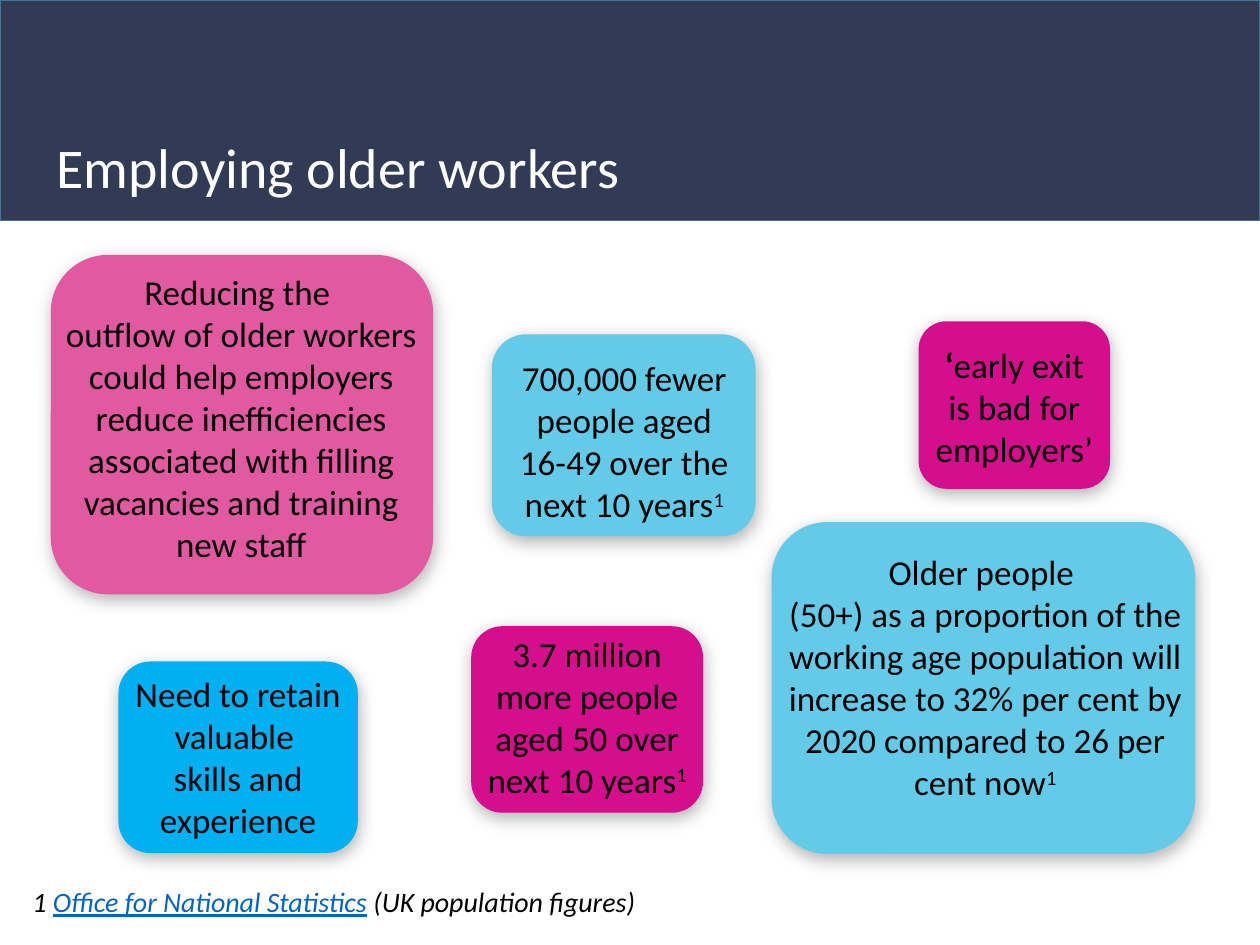
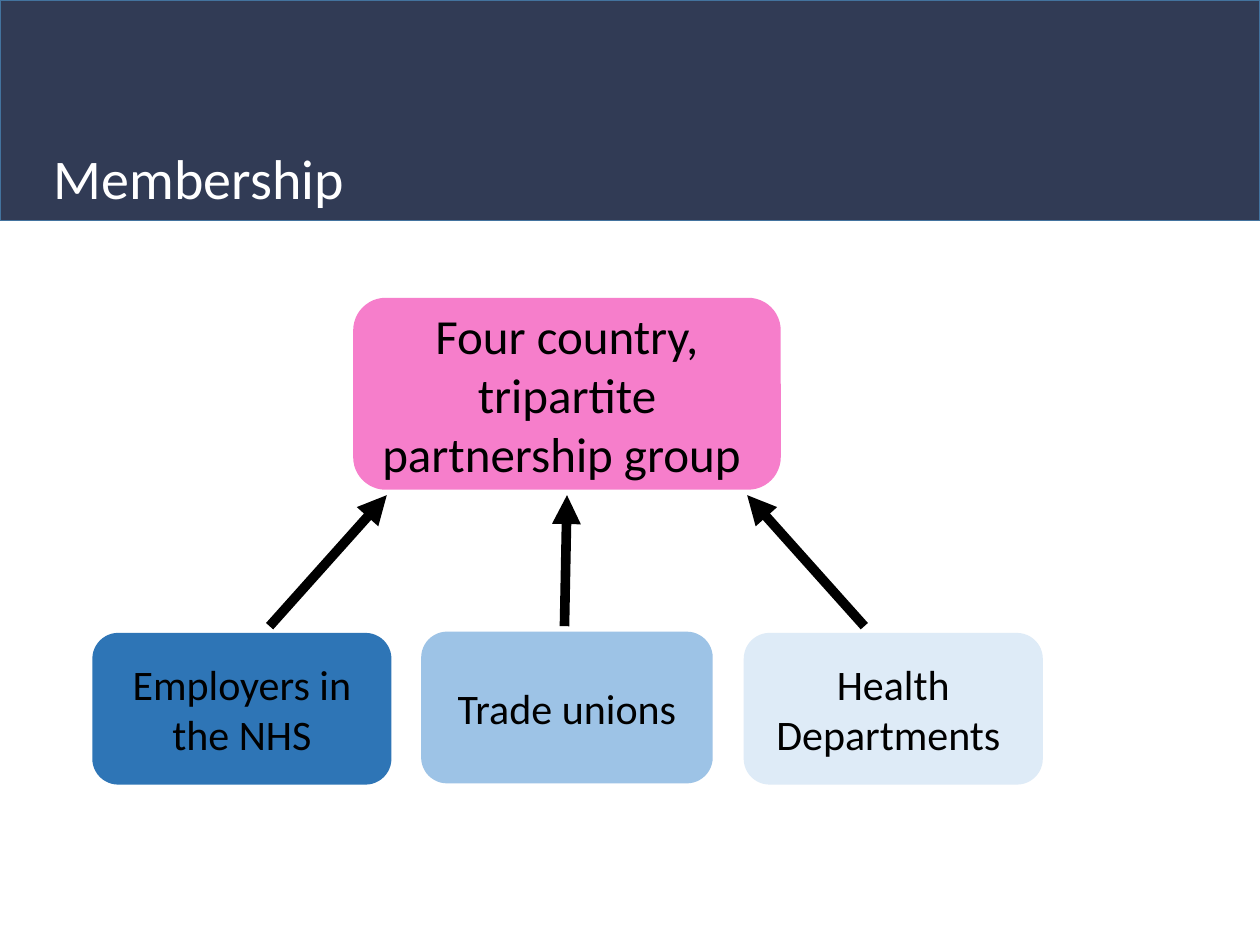
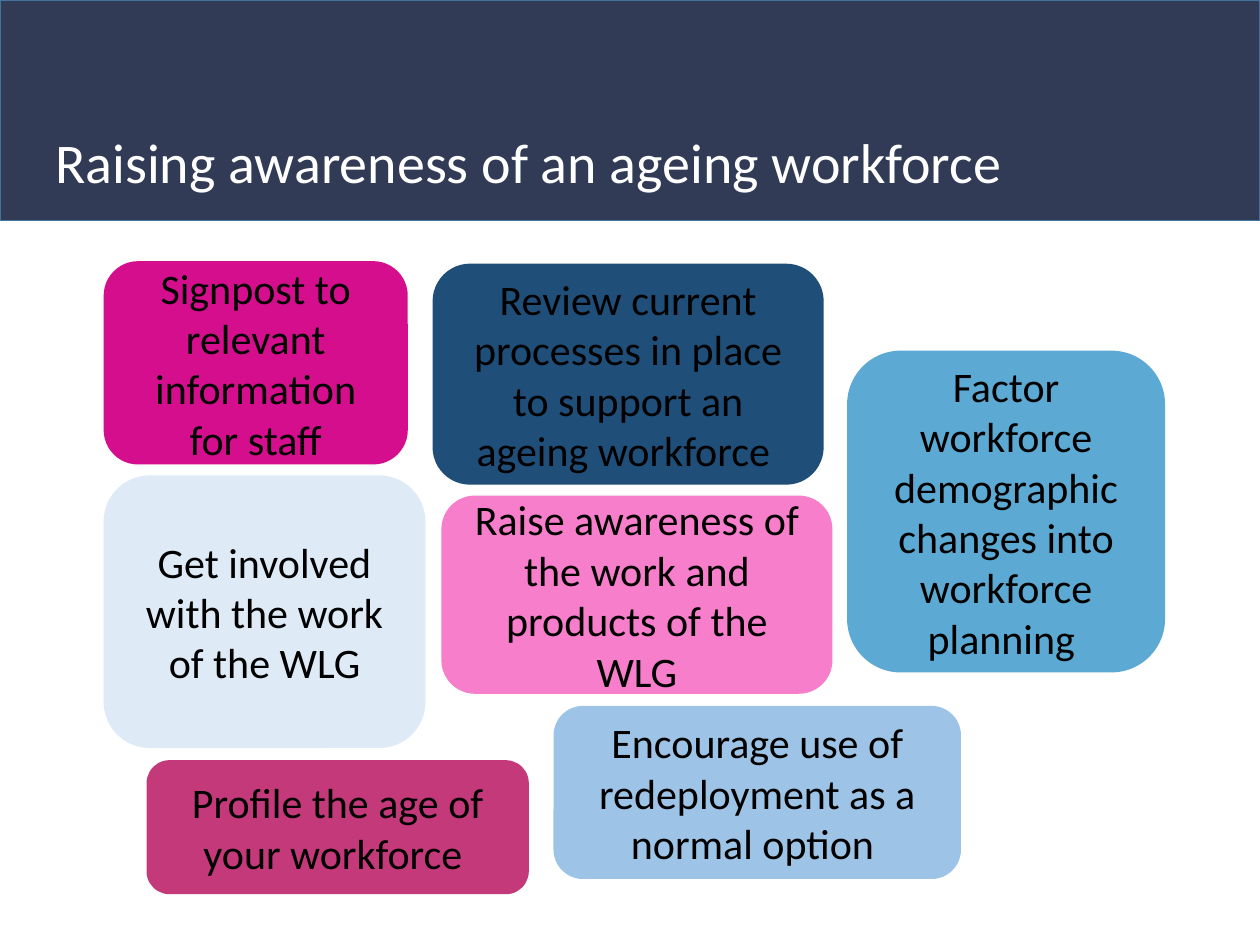
import pptx
import pptx.util
import pptx.dml.color
import pptx.enum.shapes
import pptx.enum.text
import lxml.etree
from dataclasses import dataclass
from pptx.util import Inches

SHAPE = pptx.enum.shapes.MSO_SHAPE
ANCHOR = pptx.enum.text.MSO_ANCHOR
ALIGN = pptx.enum.text.PP_ALIGN


@dataclass(frozen=True)
class Theme:
    font: str = "Calibri"
    navy: str = "313B55"
    rim: str = "43739E"
    white: str = "FFFFFF"
    black: str = "000000"
    link: str = "0563C1"
    pink: str = "F67ECB"
    rose: str = "E159A0"
    magenta: str = "D40E8C"
    berry: str = "C3397A"
    aqua: str = "63CBE8"
    bright: str = "00B0F0"
    pale: str = "DEEBF7"
    light: str = "9DC3E6"
    sky: str = "5CAAD3"
    blue: str = "2E75B6"
    deep: str = "1F4E79"
    title: int = 32
    lead: int = 28
    body: int = 24
    fact: int = 20
    note: int = 16
    arrow: float = 5.5


T = Theme()


def rgb(code):
    return pptx.dml.color.RGBColor.from_string(code)


def add_node(parent, tag, **attrs):
    name = pptx.oxml.ns.qn(tag)
    return lxml.etree.SubElement(parent, name, {k: str(v) for k, v in attrs.items()})


def write(frame, paras, size, color=T.black, align=ALIGN.CENTER, italic=None):
    frame.word_wrap = True
    for i, runs in enumerate(paras):
        para = frame.paragraphs[0] if i == 0 else frame.add_paragraph()
        para.alignment = align
        font = para.font
        font.name, font.size, font.italic = T.font, pptx.util.Pt(size), italic
        font.color.rgb = rgb(color)
        for part in [runs] if isinstance(runs, str) else runs:
            words, style = (part, "") if isinstance(part, str) else part
            run = para.add_run()
            run.text = words
            if style == "bold":
                run.font.bold = True
            elif style == "super":
                run.font._element.set("baseline", "30000")
            elif style == "link":
                run.font.underline = True
                run.font.color.rgb = rgb(T.link)


def add_text(slide, box, paras, size, **style):
    frame = slide.shapes.add_textbox(*map(Inches, box)).text_frame
    write(frame, paras, size, **style)
    return frame


def add_block(slide, kind, box, fill, edge):
    block = slide.shapes.add_shape(kind, *map(Inches, box))
    block.shadow.inherit = False
    block.fill.solid()
    block.fill.fore_color.rgb = rgb(fill)
    if edge:
        block.line.color.rgb = rgb(edge)
        block.line.width = pptx.util.Pt(1)
    else:
        block.line.fill.background()
    return block


def add_card(slide, box, fill, text, size=T.body):
    card = add_block(slide, SHAPE.ROUNDED_RECTANGLE, box, fill, fill)
    card.text_frame.vertical_anchor = ANCHOR.MIDDLE
    write(card.text_frame, [text], size)


def add_fact(slide, box, fill, edge, area, paras):
    card = add_block(slide, SHAPE.ROUNDED_RECTANGLE, box, fill, edge)
    effects = card._element.spPr.find(pptx.oxml.ns.qn("a:effectLst"))
    shade = add_node(effects, "a:outerShdw", blurRad=pptx.util.Pt(10),
                     dist=pptx.util.Pt(3), dir=80 * 60000, algn="tl", rotWithShape=0)
    add_node(add_node(shade, "a:srgbClr", val=T.black), "a:alpha", val=30000)
    add_text(slide, area, paras, T.fact)


def add_arrow(slide, start, end):
    kind = pptx.enum.shapes.MSO_CONNECTOR.STRAIGHT
    arrow = slide.shapes.add_connector(kind, *map(Inches, start + end))
    arrow.line.color.rgb = rgb(T.black)
    arrow.line.width = pptx.util.Pt(T.arrow)
    add_node(arrow.line._get_or_add_ln(), "a:tailEnd", type="triangle")
    add_node(arrow._element.spPr, "a:effectLst")


def add_slide(deck, title, left, top):
    slide = deck.slides.add_slide(deck.slide_layouts[6])
    add_block(slide, SHAPE.RECTANGLE, (0, 0, 10, 1.75), T.navy, T.rim)
    frame = add_text(slide, (left, top, 9.19, 0.59), [title], T.title,
                     color=T.white, align=ALIGN.LEFT)
    frame.paragraphs[0].line_spacing = 0.9
    return slide


def draw_facts(deck):
    slide = add_slide(deck, "Employing older workers", 0.35, 1.06)
    mark = ("1", "super")
    facts = [
        ((6.13, 4.15, 3.35, 2.62), T.aqua, T.aqua, (6.16, 4.32, 3.32, 2.46),
         ["Older people ",
          ["(50+) as a proportion of the working age population will increase to "
           "32% per cent by 2020 compared to 26 per cent now", mark]]),
        ((3.74, 4.97, 1.84, 1.48), T.magenta, None, (3.74, 4.97, 1.84, 1.45),
         [["3.7 million more people aged 50 over next 10 years", mark]]),
        ((7.29, 2.55, 1.52, 1.33), T.magenta, None, (7.29, 2.68, 1.52, 1.11),
         [[("‘", "bold"), "early exit is bad for employers’"]]),
        ((3.91, 2.66, 2.08, 1.59), T.aqua, T.aqua, (3.99, 2.78, 1.93, 1.78),
         [["700,000 fewer people aged 16-49 over the next 10 years", mark]]),
        ((0.94, 5.25, 1.9, 1.52), T.bright, None, (0.94, 5.29, 1.9, 1.45),
         ["Need to retain valuable ", "skills and experience"]),
        ((0.41, 2.03, 3.02, 2.68), T.rose, T.rose, (0.4, 2.1, 3.03, 2.76),
         ["Reducing the ",
          "outflow of older workers could help employers reduce inefficiencies "
          "associated with filling vacancies and training new staff"]),
    ]
    for fact in facts:
        add_fact(slide, *fact)
    source = ["1 ", ("Office for National Statistics", "link"), " (UK population figures)"]
    add_text(slide, (0.16, 6.97, 5.97, 0.37), [source], T.note,
             align=ALIGN.LEFT, italic=True)


def draw_members(deck):
    slide = add_slide(deck, "Membership", 0.33, 1.15)
    members = [
        ((3.35, 5.02, 2.3, 1.19), T.light, "Trade unions"),
        ((5.91, 5.03, 2.36, 1.19), T.pale, "Health Departments "),
        ((0.74, 5.03, 2.36, 1.19), T.blue, "Employers in the NHS"),
    ]
    for member in members:
        add_card(slide, *member)
    add_card(slide, (2.81, 2.37, 3.38, 1.51), T.pink,
             "Four country, tripartite partnership group ", T.lead)
    for start, end in ((2.14, 3.07), (4.48, 4.5), (6.86, 5.93)):
        add_arrow(slide, (start, 4.97), (end, 3.93))


def draw_actions(deck):
    slide = add_slide(deck, "Raising awareness of an ageing workforce", 0.34, 1.02)
    actions = [
        ((0.83, 2.08, 2.4, 1.6), T.magenta, "Signpost to relevant information for staff"),
        ((4.4, 5.61, 3.22, 1.36), T.light,
         "Encourage use of redeployment as a normal option "),
        ((3.44, 2.1, 3.09, 1.74), T.deep,
         "Review current processes in place to support an ageing workforce "),
        ((1.17, 6.04, 3.02, 1.05), T.berry, "Profile the age of your workforce "),
        ((6.73, 2.79, 2.51, 2.54), T.sky,
         "Factor workforce demographic changes into workforce planning "),
        ((3.51, 3.94, 3.09, 1.56), T.pink,
         "Raise awareness of the work and products of the WLG"),
        ((0.83, 3.78, 2.54, 2.15), T.pale, "Get involved with the work of the WLG"),
    ]
    for action in actions:
        add_card(slide, *action)


def main():
    deck = pptx.Presentation()
    deck.slide_width, deck.slide_height = Inches(10), Inches(7.5)
    draw_facts(deck)
    draw_members(deck)
    draw_actions(deck)
    deck.save("out.pptx")


if __name__ == "__main__":
    main()
